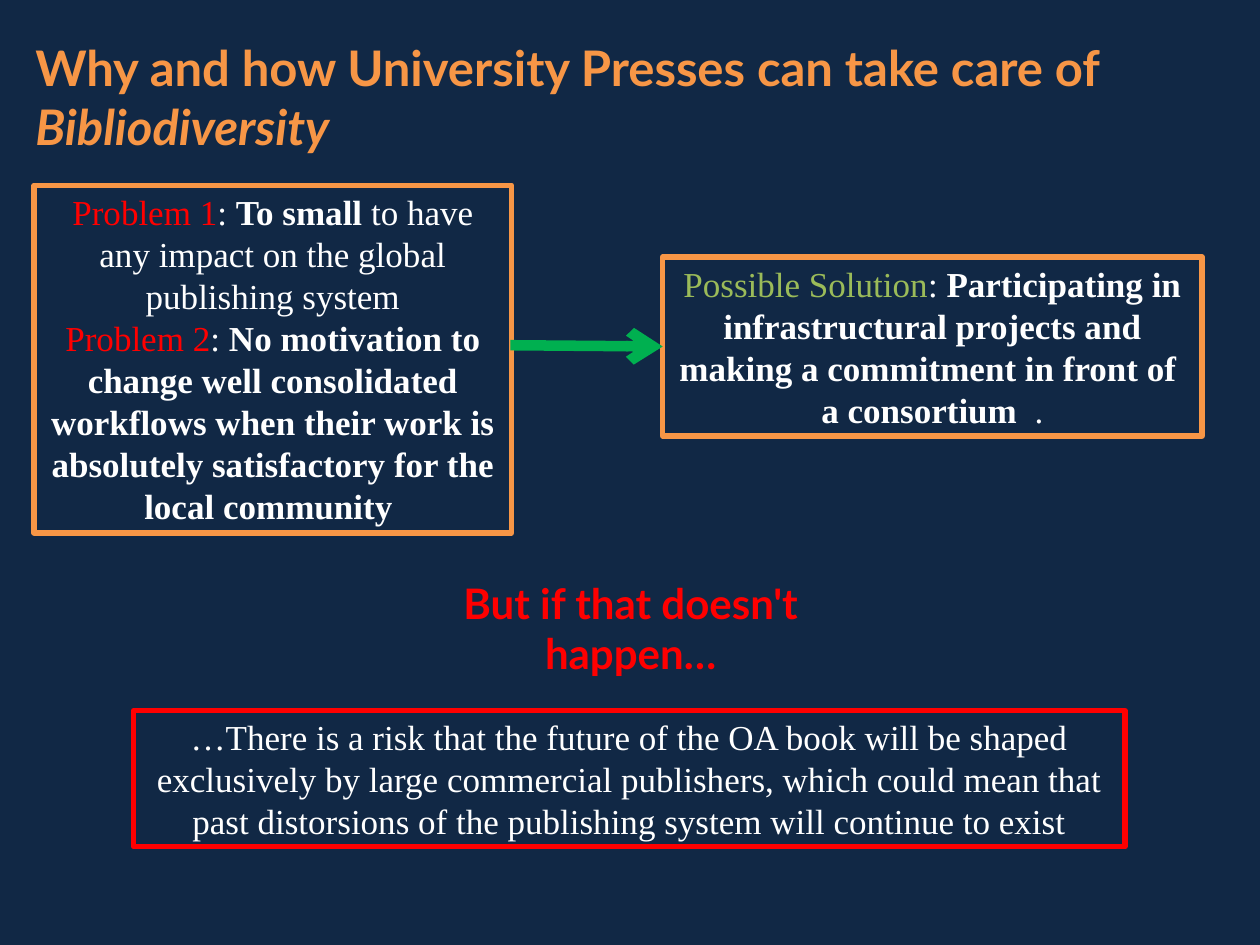
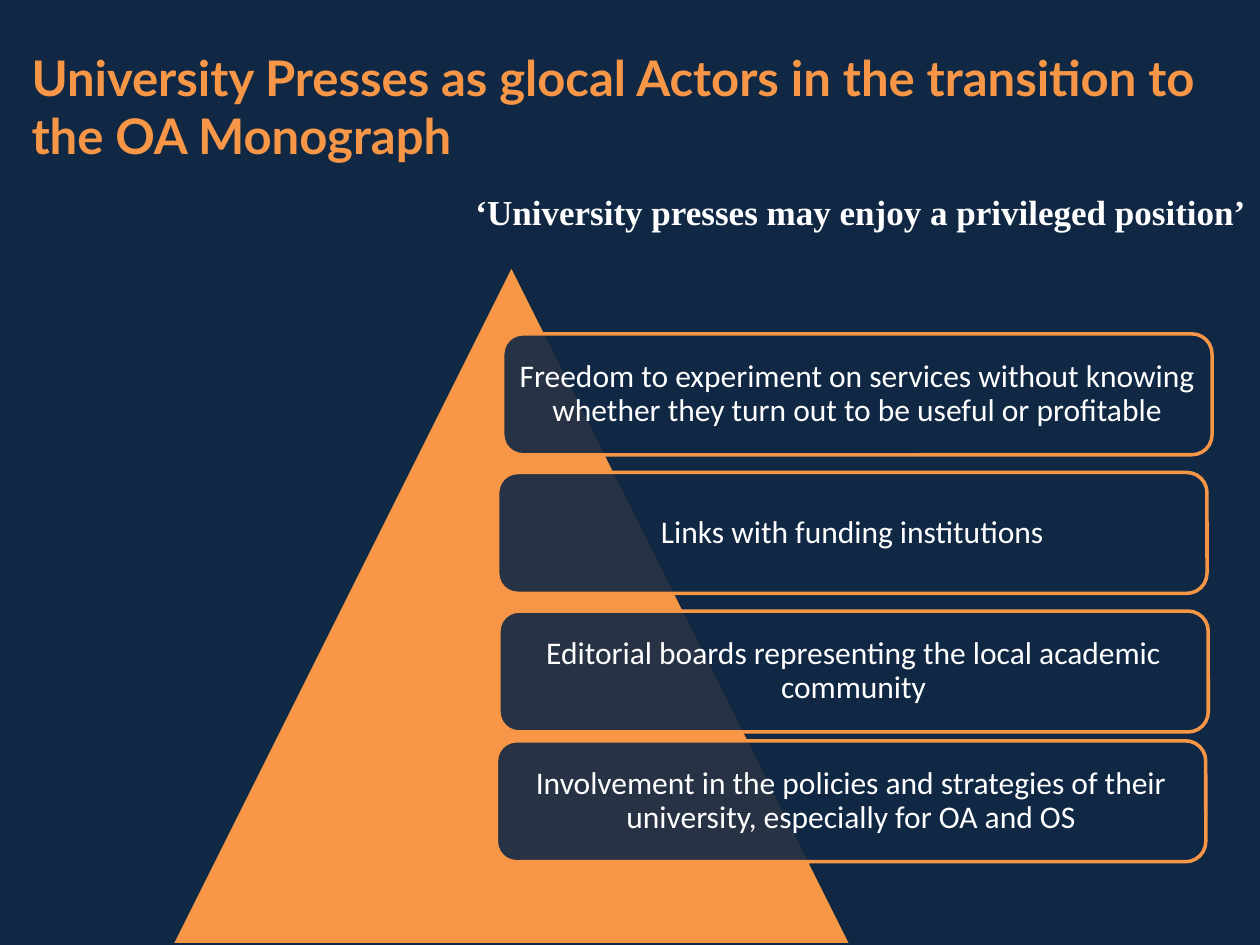
"""Build two slides on university presses and bibliodiversity."""
from lxml.etree import SubElement
from pptx import Presentation
from pptx.dml.color import RGBColor
from pptx.enum.shapes import MSO_CONNECTOR, MSO_SHAPE
from pptx.enum.text import MSO_ANCHOR, PP_ALIGN
from pptx.oxml.ns import qn
from pptx.util import Inches, Pt

NAVY, ORANGE, WHITE = "112845", "F79646", "FFFFFF"
RED, OLIVE, GREEN = "FF0000", "9BBB59", "00B050"
HEADING, SERIF, BODY = "Lato", "Times New Roman", "Calibri"


def rgb(color):
    return RGBColor.from_string(color)


class Deck:
    def __init__(self):
        self.prs = Presentation()
        self.prs.slide_width, self.prs.slide_height = Inches(10), Inches(7.5)
        background = self.prs.slide_master.background.fill
        background.solid()
        background.fore_color.rgb = rgb(NAVY)
        self.slide = None

    def place(self, area):
        return [Inches(length) for length in area]

    def set_text(self, frame, paragraphs, font, size, inset=(0.07, 0.04),
                 align=PP_ALIGN.CENTER, anchor=MSO_ANCHOR.TOP, spacing=None):
        frame.word_wrap = True
        frame.vertical_anchor = anchor
        frame.margin_left = frame.margin_right = Inches(inset[0])
        frame.margin_top = frame.margin_bottom = Inches(inset[1])
        for index, pieces in enumerate(paragraphs):
            paragraph = frame.add_paragraph() if index else frame.paragraphs[0]
            paragraph.alignment = align
            paragraph.line_spacing = spacing
            for text, color, *styles in pieces:
                run = paragraph.add_run()
                run.text = text
                run.font.name, run.font.size = font, Pt(size)
                run.font.color.rgb = rgb(color)
                run.font.bold = "bold" in styles
                run.font.italic = "italic" in styles

    def new_slide(self, area, *title):
        self.slide = self.prs.slides.add_slide(self.prs.slide_layouts[5])
        heading = self.slide.shapes.title
        heading.left, heading.top, heading.width, heading.height = self.place(area)
        pieces = [(text, ORANGE, "bold", *styles) for text, *styles in title]
        self.set_text(heading.text_frame, [pieces], HEADING, 28, inset=(0, 0),
                      align=PP_ALIGN.LEFT, anchor=MSO_ANCHOR.MIDDLE)

    def shape(self, kind, area, line, width, fill=None, opacity=100):
        shape = self.slide.shapes.add_shape(kind, *self.place(area))
        shape.shadow.inherit = False
        shape.line.color.rgb, shape.line.width = rgb(line), Pt(width)
        if fill:
            shape.fill.solid()
            shape.fill.fore_color.rgb = rgb(fill)
            if opacity < 100:
                color = shape._element.spPr.find(qn("a:solidFill"))[0]
                SubElement(color, qn("a:alpha"), val=str(opacity * 1000))
        else:
            shape.fill.background()
        return shape

    def frame_box(self, area, paragraphs, line=ORANGE):
        box = self.shape(MSO_SHAPE.RECTANGLE, area, line, 3)
        self.set_text(box.text_frame, paragraphs, SERIF, 20)
        return box

    def card(self, left, top, text):
        card = self.shape(MSO_SHAPE.ROUNDED_RECTANGLE, (left, top, 5.63, 0.96),
                          ORANGE, 2, NAVY, 90)
        self.set_text(card.text_frame, [[(text, WHITE)]], BODY, 18, inset=(0.07, 0.07),
                      anchor=MSO_ANCHOR.MIDDLE, spacing=0.9)

    def label(self, area, text, color, font, size, align=PP_ALIGN.CENTER):
        label = self.slide.shapes.add_textbox(*self.place(area))
        self.set_text(label.text_frame, [[(text, color, "bold")]], font, size, align=align)

    def arrow(self, start, end, target, side):
        arrow = self.slide.shapes.add_connector(
            MSO_CONNECTOR.STRAIGHT, *self.place(start + end))
        arrow.end_connect(target, side)
        arrow.line.color.rgb, arrow.line.width = rgb(GREEN), Pt(6)
        outline = arrow._element.spPr.find(qn("a:ln"))
        SubElement(outline, qn("a:tailEnd"), type="arrow")
        SubElement(arrow._element.spPr, qn("a:effectLst"))


def bibliodiversity(deck):
    deck.new_slide((0.28, 0.29, 9.5, 0.95),
                   ("Why and how University Presses can take care of ",),
                   ("Bibliodiversity", "italic"))
    deck.frame_box((0.27, 1.47, 3.79, 2.76), [
        [("Problem 1", RED), (": ", WHITE), ("To small ", WHITE, "bold"),
         ("to have any impact on the global publishing system", WHITE)],
        [("Problem 2", RED), (": ", WHITE),
         ("No motivation to change well consolidated workflows when their work is "
          "absolutely satisfactory for the local community ", WHITE, "bold")]])
    solution = deck.frame_box((5.26, 2.04, 4.28, 1.42), [
        [("Possible Solution", OLIVE), (": ", WHITE),
         ("Participating in infrastructural projects and making a commitment "
          "in front of  a consortium  ", WHITE, "bold"), (".", WHITE)]])
    deck.label((3.43, 4.54, 3.15, 0.88), "But if that doesn't happen…", RED, HEADING, 24)
    deck.frame_box((1.06, 5.64, 7.87, 1.08), [
        [("…There is a risk that the future of the OA book will be shaped exclusively "
          "by large commercial publishers, which could mean that past distorsions of "
          "the publishing system will continue to exist", WHITE)]], RED)
    deck.arrow((4.05, 2.74), (5.26, 2.75), solution, 1)


def glocal_actors(deck):
    deck.new_slide((0.25, 0.29, 9.31, 1.1),
                   ("University Presses as glocal Actors in the transition to "
                    "the OA Monograph",))
    deck.label((0.4, 1.47, 9.61, 0.41),
               "‘University presses may enjoy a privileged position’ ",
               WHITE, SERIF, 20, PP_ALIGN.RIGHT)
    deck.shape(MSO_SHAPE.ISOSCELES_TRIANGLE, (1.36, 2.1, 5.4, 5.4), NAVY, 2, ORANGE)
    advantages = [
        (3.99, 2.65, "Freedom to experiment on services without knowing whether "
                     "they turn out to be useful or profitable"),
        (3.95, 3.75, "Links with funding institutions"),
        (3.96, 4.85, "Editorial boards representing the local academic community"),
        (3.94, 5.88, "Involvement in the policies and strategies of their "
                     "university, especially for OA and OS")]
    for left, top, text in advantages:
        deck.card(left, top, text)


def main():
    deck = Deck()
    bibliodiversity(deck)
    glocal_actors(deck)
    deck.prs.save("out.pptx")


if __name__ == "__main__":
    main()
